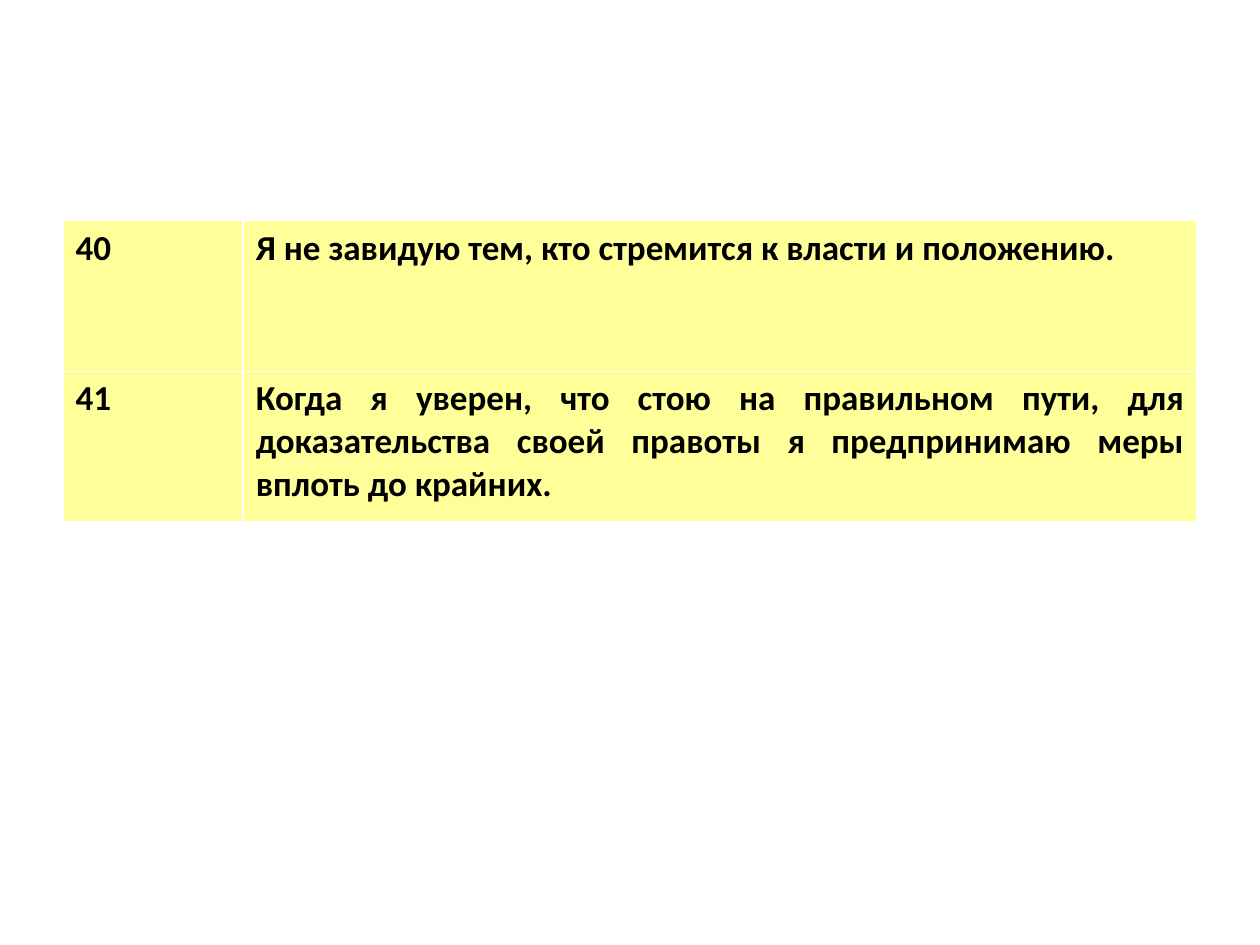
from pptx import Presentation
from pptx.dml.color import RGBColor
from pptx.enum import text
from pptx.util import Pt

ROWS = [
    ("40", "Я не завидую тем, кто стремится к власти и положению."),
    ("41", "Когда я уверен, что стою на правильном пути, для доказательства "
           "своей правоты я предпринимаю меры вплоть до крайних."),
]
WIDTHS = (103, 545)
HEIGHT = 86.2
LEFT, TOP = 36, 126
FONT = {"name": "Calibri", "size": Pt(20), "bold": True}


def paint(form, tone):
    form.rgb = RGBColor.from_string(tone)


def fill(cell, words):
    cell.fill.solid()
    paint(cell.fill.fore_color, "FFFF99")
    cell.text = words
    para = cell.text_frame.paragraphs[0]
    para.alignment = text.PP_ALIGN.JUSTIFY
    font = para.runs[0].font
    for key, value in FONT.items():
        setattr(font, key, value)
    paint(font.color, "000000")


def main():
    deck = Presentation()
    deck.slide_width, deck.slide_height = Pt(720), Pt(540)
    slide = deck.slides.add_slide(deck.slide_layouts[6])
    table = slide.shapes.add_table(
        len(ROWS), len(WIDTHS), Pt(LEFT), Pt(TOP),
        Pt(sum(WIDTHS)), Pt(HEIGHT * len(ROWS))).table
    for col, width in zip(table.columns, WIDTHS):
        col.width = Pt(width)
    for row, items in zip(table.rows, ROWS):
        row.height = Pt(HEIGHT)
        for cell, words in zip(row.cells, items):
            fill(cell, words)
    deck.save("out.pptx")


if __name__ == "__main__":
    main()
